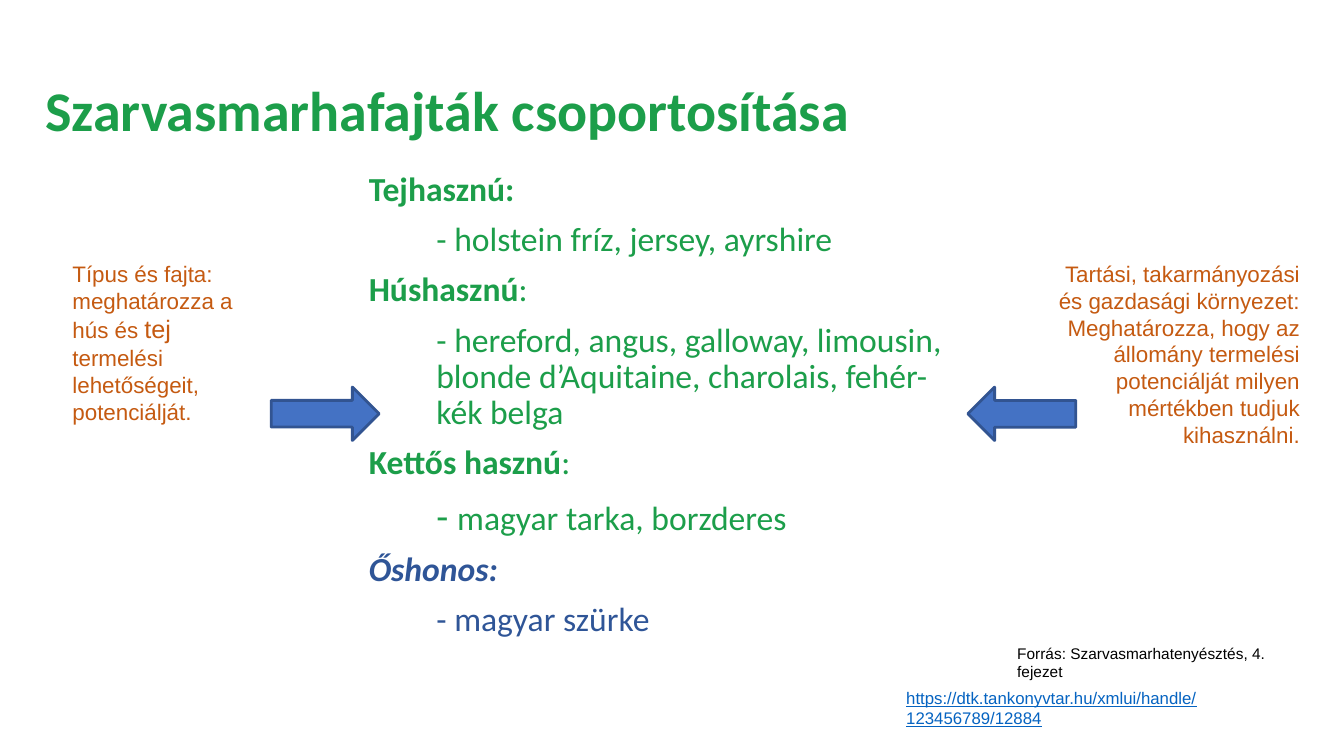
"""Build the slide on the grouping of cattle breeds."""
from dataclasses import dataclass

from pptx import Presentation
from pptx.dml.color import RGBColor
from pptx.enum import shapes, text
from pptx.util import Inches, Pt


@dataclass(frozen=True)
class Theme:
    """Colours, fonts and type sizes of the slide."""
    green: str = "1C9E4A"
    blue: str = "2F5597"
    orange: str = "C55A11"
    black: str = "000000"
    link: str = "0563C1"
    arrow_fill: str = "4472C4"
    arrow_line: str = "325491"
    heading_font: str = "Calibri"
    note_font: str = "Arial"
    title: int = 40
    body: int = 24
    large_dash: int = 28
    note: int = 16
    large_note: int = 18
    source: int = 11
    address: int = 12


THEME = Theme()


def add_text(paragraph, words, font, size, color, bold=False, italic=False, underline=False):
    """Append one formatted run to a paragraph."""
    run = paragraph.add_run()
    run.text = words
    run.font.name = font
    run.font.size = Pt(size)
    run.font.color.rgb = RGBColor.from_string(color)
    run.font.bold = bold
    run.font.italic = italic
    run.font.underline = underline


def add_frame(slide, box, anchor=text.MSO_ANCHOR.TOP):
    """Add a wrapping text box and return its text frame."""
    frame = slide.shapes.add_textbox(*map(Inches, box)).text_frame
    frame.word_wrap = True
    frame.vertical_anchor = anchor
    return frame


def next_paragraph(frame, index):
    """Return the first paragraph of a frame, or a new one."""
    return frame.add_paragraph() if index else frame.paragraphs[0]


def add_title(slide, box, words):
    """Place the slide title."""
    paragraph = add_frame(slide, box, text.MSO_ANCHOR.MIDDLE).paragraphs[0]
    paragraph.line_spacing = 0.9
    add_text(paragraph, words, THEME.heading_font, THEME.title, THEME.green, bold=True)


def add_breed_groups(slide, box, groups):
    """Place each group's name and, indented below it, its breeds."""
    frame = add_frame(slide, box)
    indent = Inches(0.67)

    def add_line(index):
        paragraph = next_paragraph(frame, index)
        paragraph.line_spacing = 0.9
        paragraph.space_before = Pt(10 if index else 0)
        properties = paragraph._p.get_or_add_pPr()
        properties.set("marL", str(indent))
        properties.set("indent", str(-indent))
        return paragraph

    for number, (name, colon, breeds, color, dash_size, italic) in enumerate(groups):
        font, size = THEME.heading_font, THEME.body
        heading = add_line(2 * number)
        add_text(heading, name, font, size, color, bold=True, italic=italic)
        if colon:
            add_text(heading, colon, font, size, color)
        listing = add_line(2 * number + 1)
        add_text(listing, "\t- ", font, dash_size, color)
        add_text(listing, breeds, font, size, color, italic=False)


def add_note(slide, box, paragraphs, color, align=text.PP_ALIGN.LEFT, underline=False):
    """Place a note whose paragraphs are lists of (words, size)."""
    frame = add_frame(slide, box)
    for index, runs in enumerate(paragraphs):
        paragraph = next_paragraph(frame, index)
        paragraph.alignment = align
        for words, size in runs:
            add_text(paragraph, words, THEME.note_font, size, color, underline=underline)


def add_arrow(slide, box, rotation):
    """Place a block arrow that points to the breed list."""
    arrow = slide.shapes.add_shape(shapes.MSO_SHAPE.RIGHT_ARROW, *map(Inches, box))
    arrow.rotation = rotation
    arrow.shadow.inherit = False
    arrow.fill.solid()
    arrow.fill.fore_color.rgb = RGBColor.from_string(THEME.arrow_fill)
    arrow.line.color.rgb = RGBColor.from_string(THEME.arrow_line)
    arrow.line.width = Pt(2)


def add_sources(slide, left, top):
    """Place the source and its address in the lower right corner."""
    add_note(slide, (left + 1.1, top, 2.89, 0.29),
             [[("Forrás: Szarvasmarhatenyésztés, 4. fejezet", THEME.source)]], THEME.black)
    address = "https://dtk.tankonyvtar.hu/xmlui/handle/123456789/12884"
    add_note(slide, (left, top + 0.43, 4.3, 0.61), [[(address, THEME.address)]],
             THEME.link, underline=True)


def main():
    """Build and save the presentation."""
    presentation = Presentation()
    presentation.slide_width, presentation.slide_height = Inches(13.33), Inches(7.5)
    slide = presentation.slides.add_slide(presentation.slide_layouts[6])

    add_title(slide, (0.35, 0.4, 12.64, 1.45), "Szarvasmarhafajták csoportosítása")
    add_breed_groups(slide, (3.56, 1.66, 6.04, 5.62), [
        ("Tejhasznú:", "", "holstein fríz, jersey, ayrshire",
         THEME.green, THEME.body, False),
        ("Húshasznú", ":",
         "hereford, angus, galloway, limousin, blonde d’Aquitaine, charolais, fehér-kék belga",
         THEME.green, THEME.body, False),
        ("Kettős hasznú", ":", "magyar tarka, borzderes",
         THEME.green, THEME.large_dash, False),
        ("Őshonos:", "", "magyar szürke", THEME.blue, THEME.body, True),
    ])
    add_sources(slide, 8.89, 6.34)
    add_note(slide, (0.62, 2.53, 2.06, 2.02), [[
        ("Típus és fajta: meghatározza a hús és ", THEME.note),
        ("tej", THEME.large_note),
        (" termelési lehetőségeit, potenciálját.", THEME.note),
    ]], THEME.orange)
    add_note(slide, (10.22, 2.53, 2.77, 1.99), [
        [("Tartási, takarmányozási és gazdasági környezet:", THEME.note)],
        [("Meghatározza, hogy az állomány termelési potenciálját milyen "
          "mértékben tudjuk kihasználni.", THEME.note)],
    ], THEME.orange, align=text.PP_ALIGN.RIGHT)
    for left, rotation in ((2.69, 0), (9.6, 180)):
        add_arrow(slide, (left, 3.84, 1.07, 0.53), rotation)

    presentation.save("out.pptx")


if __name__ == "__main__":
    main()
